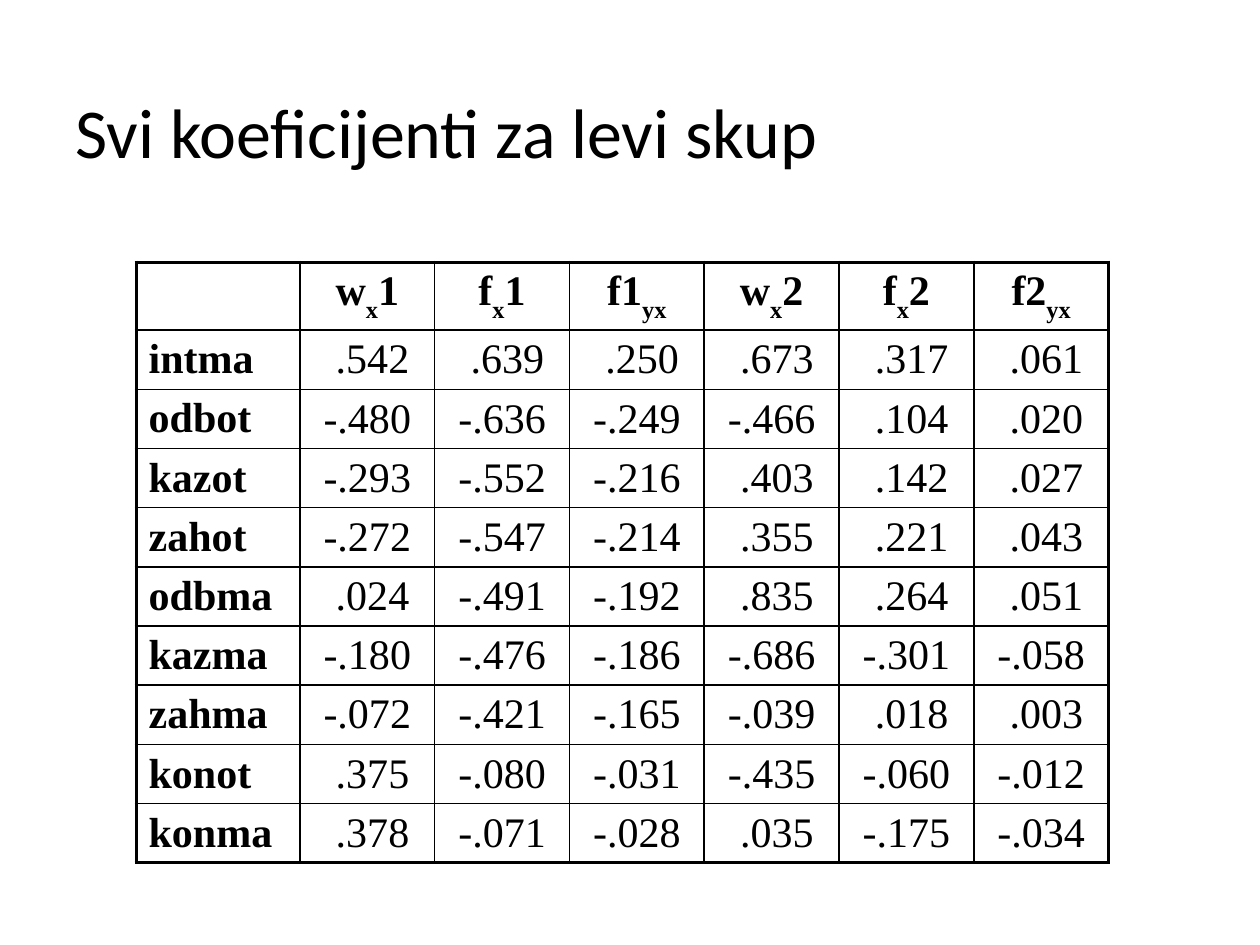
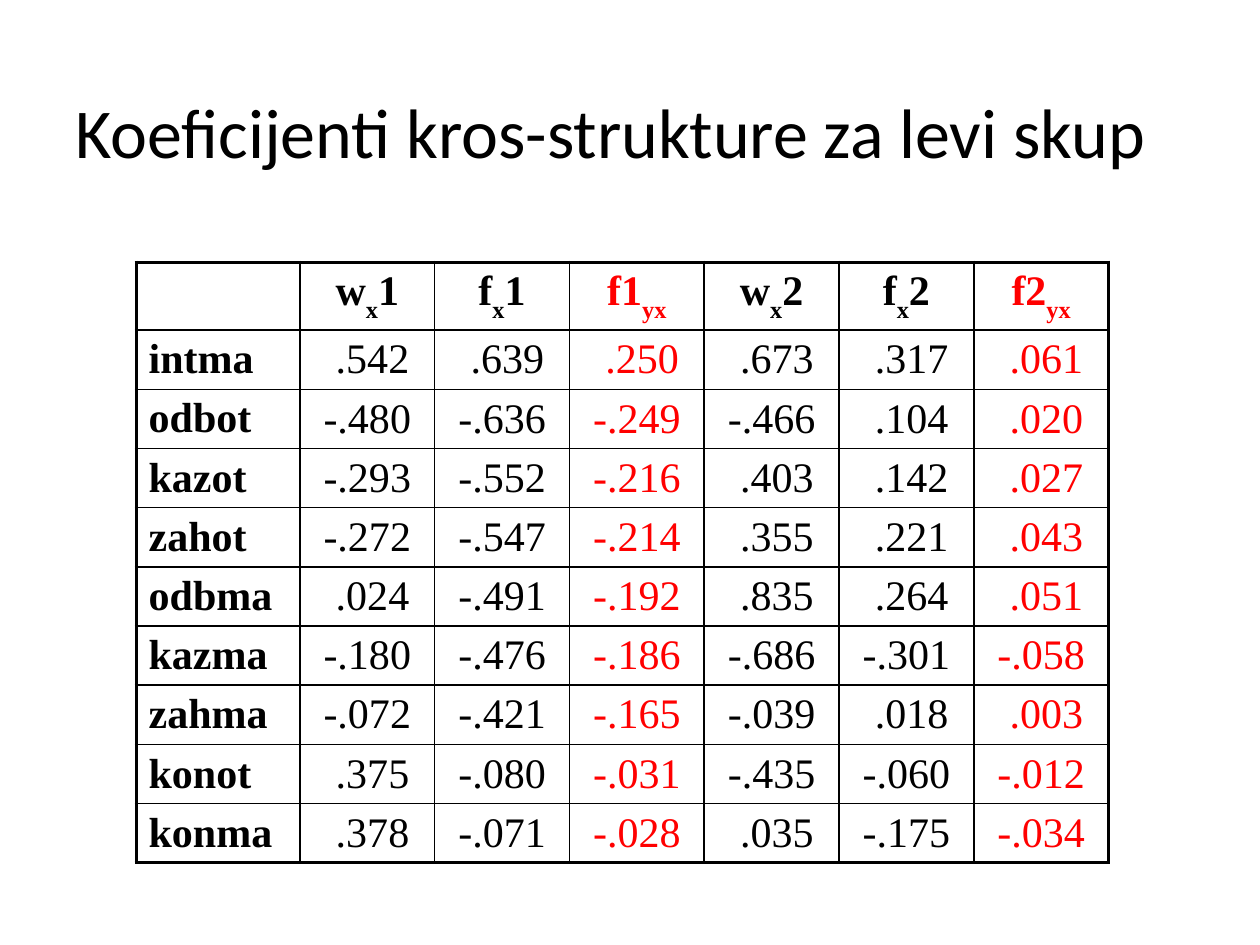
from lxml import etree
from pptx import Presentation
from pptx.dml.color import RGBColor
from pptx.enum.text import MSO_ANCHOR, PP_ALIGN
from pptx.oxml.ns import qn
from pptx.util import Inches, Pt

LEFT, CENTER = PP_ALIGN.LEFT, PP_ALIGN.CENTER
TOP, MIDDLE = MSO_ANCHOR.TOP, MSO_ANCHOR.MIDDLE
TITLE_ONLY = 5

COLORS = {"background": "FFFFFF", "text": "000000", "highlight": "FF0000"}
TITLE_FONT, TABLE_FONT = "Calibri", "Times New Roman"
LABEL_WIDTH, VALUE_WIDTH = 1.3, 1.07
HEADER_HEIGHT, ROW_HEIGHT = 0.54, 0.47
INNER_LINE, OUTER_LINE = 1, 2

COEFFICIENTS = [
    ("w", "x", "1"), ("f", "x", "1"), ("f1", "yx", ""),
    ("w", "x", "2"), ("f", "x", "2"), ("f2", "yx", ""),
]
CROSS_STRUCTURE = (3, 6)
VARIABLES = {
    "intma": [".542", ".639", ".250", ".673", ".317", ".061"],
    "odbot": ["-.480", "-.636", "-.249", "-.466", ".104", ".020"],
    "kazot": ["-.293", "-.552", "-.216", ".403", ".142", ".027"],
    "zahot": ["-.272", "-.547", "-.214", ".355", ".221", ".043"],
    "odbma": [".024", "-.491", "-.192", ".835", ".264", ".051"],
    "kazma": ["-.180", "-.476", "-.186", "-.686", "-.301", "-.058"],
    "zahma": ["-.072", "-.421", "-.165", "-.039", ".018", ".003"],
    "konot": [".375", "-.080", "-.031", "-.435", "-.060", "-.012"],
    "konma": [".378", "-.071", "-.028", ".035", "-.175", "-.034"],
}


class Deck:
    def __init__(self):
        self.presentation = Presentation()
        self.presentation.slide_width = Inches(10)
        self.presentation.slide_height = Inches(7.5)
        self.slide = None

    def add_slide(self):
        layout = self.presentation.slide_layouts[TITLE_ONLY]
        self.slide = self.presentation.slides.add_slide(layout)
        background = self.slide.background.fill
        background.solid()
        background.fore_color.rgb = RGBColor.from_string(COLORS["background"])

    def style(self, paragraph, font_name, size, align, color="text", bold=False):
        paragraph.alignment = align
        font = paragraph.font
        font.name, font.size, font.bold = font_name, Pt(size), bold
        font.color.rgb = RGBColor.from_string(COLORS[color])

    def title(self, text):
        heading = self.slide.shapes.title
        heading.left, heading.top = Inches(0.5), Inches(0.32)
        heading.width, heading.height = Inches(9), Inches(1.51)
        frame = heading.text_frame
        frame.text = text
        frame.word_wrap = True
        frame.vertical_anchor = MIDDLE
        frame.paragraphs[0].line_spacing = 0.9
        self.style(frame.paragraphs[0], TITLE_FONT, 40, LEFT)

    def borders(self, cell, outer_sides):
        properties = cell._tc.get_or_add_tcPr()
        for side in "LRTB":
            width = OUTER_LINE if side in outer_sides else INNER_LINE
            line = etree.SubElement(properties, qn(f"a:ln{side}"), w=str(Pt(width)))
            fill = etree.SubElement(line, qn("a:solidFill"))
            etree.SubElement(fill, qn("a:srgbClr"), val=COLORS["text"])

    def cell(self, cell, parts, outer_sides, align, anchor, color, bold):
        self.borders(cell, outer_sides)
        cell.fill.background()
        cell.vertical_anchor = anchor
        paragraph = cell.text_frame.paragraphs[0]
        self.style(paragraph, TABLE_FONT, 24, align, color, bold)
        for position, part in enumerate(parts):
            if part:
                run = paragraph.add_run()
                run.text = part
                if position == 1:
                    run._r.get_or_add_rPr().set("baseline", "-30000")

    def coefficient_table(self, highlighted=()):
        rows = [[(), *COEFFICIENTS]]
        for variable, values in VARIABLES.items():
            rows.append([(variable,), *((f"{value:>5}",) for value in values)])
        last_row, last_column = len(rows) - 1, len(COEFFICIENTS)
        table = self.slide.shapes.add_table(
            last_row + 1, last_column + 1, Inches(1.08), Inches(2.08),
            Inches(LABEL_WIDTH + last_column * VALUE_WIDTH),
            Inches(HEADER_HEIGHT + last_row * ROW_HEIGHT)).table
        table.first_row = table.horz_banding = False
        for index, column in enumerate(table.columns):
            column.width = Inches(VALUE_WIDTH if index else LABEL_WIDTH)
        for r, row in enumerate(rows):
            table.rows[r].height = Inches(ROW_HEIGHT if r else HEADER_HEIGHT)
            for c, parts in enumerate(row):
                edges = {"L": c == 0, "R": c == last_column,
                         "T": r == 0, "B": r == last_row}
                self.cell(table.cell(r, c), parts,
                          [side for side, outer in edges.items() if outer],
                          CENTER if c else LEFT, MIDDLE if c else TOP,
                          "highlight" if c in highlighted else "text",
                          r == 0 or c == 0)


def main():
    deck = Deck()
    for title, highlighted in (
            ("Svi koeficijenti za levi skup", ()),
            ("Koeficijenti kros-strukture za levi skup", CROSS_STRUCTURE)):
        deck.add_slide()
        deck.title(title)
        deck.coefficient_table(highlighted)
    deck.presentation.save("out.pptx")


if __name__ == "__main__":
    main()
